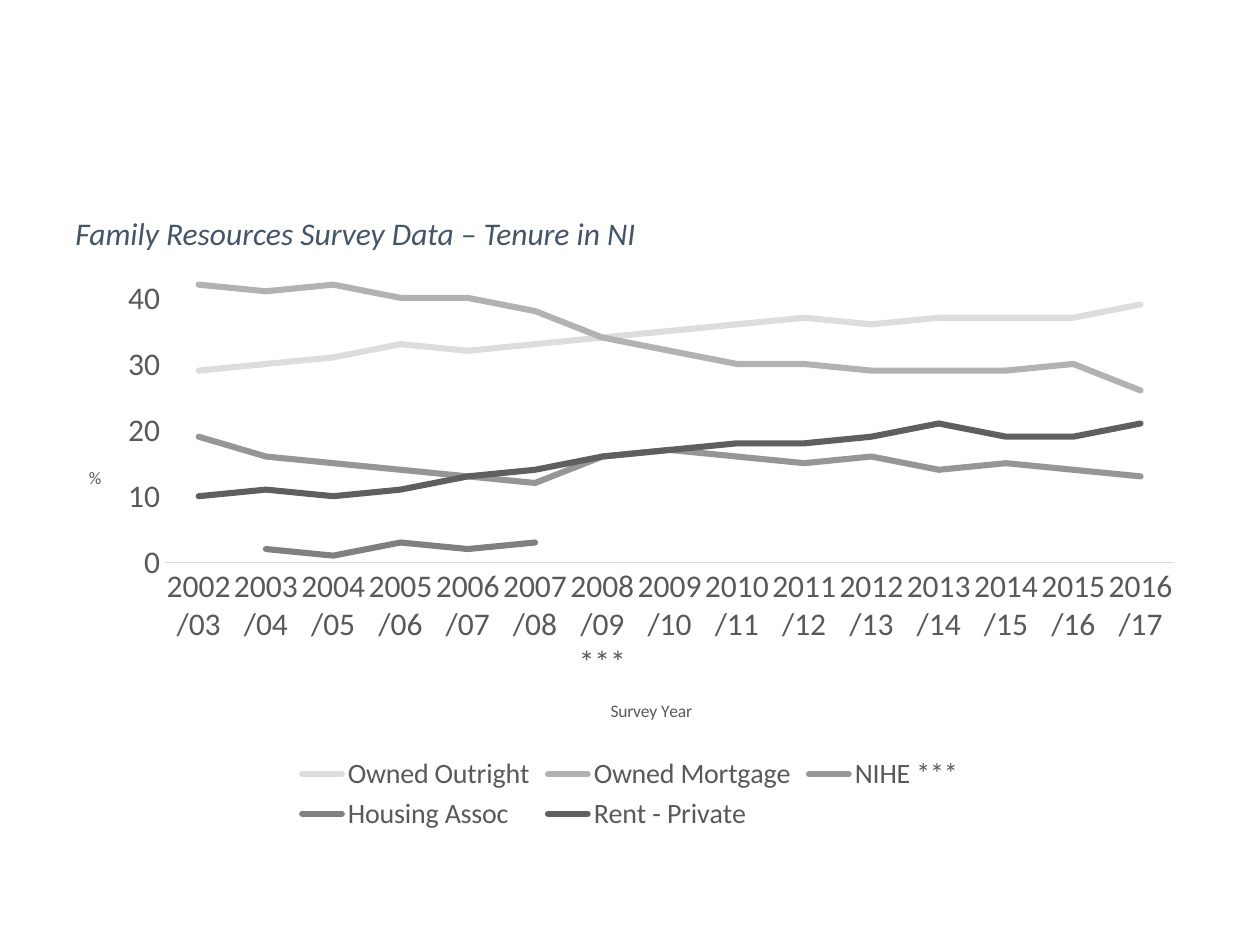
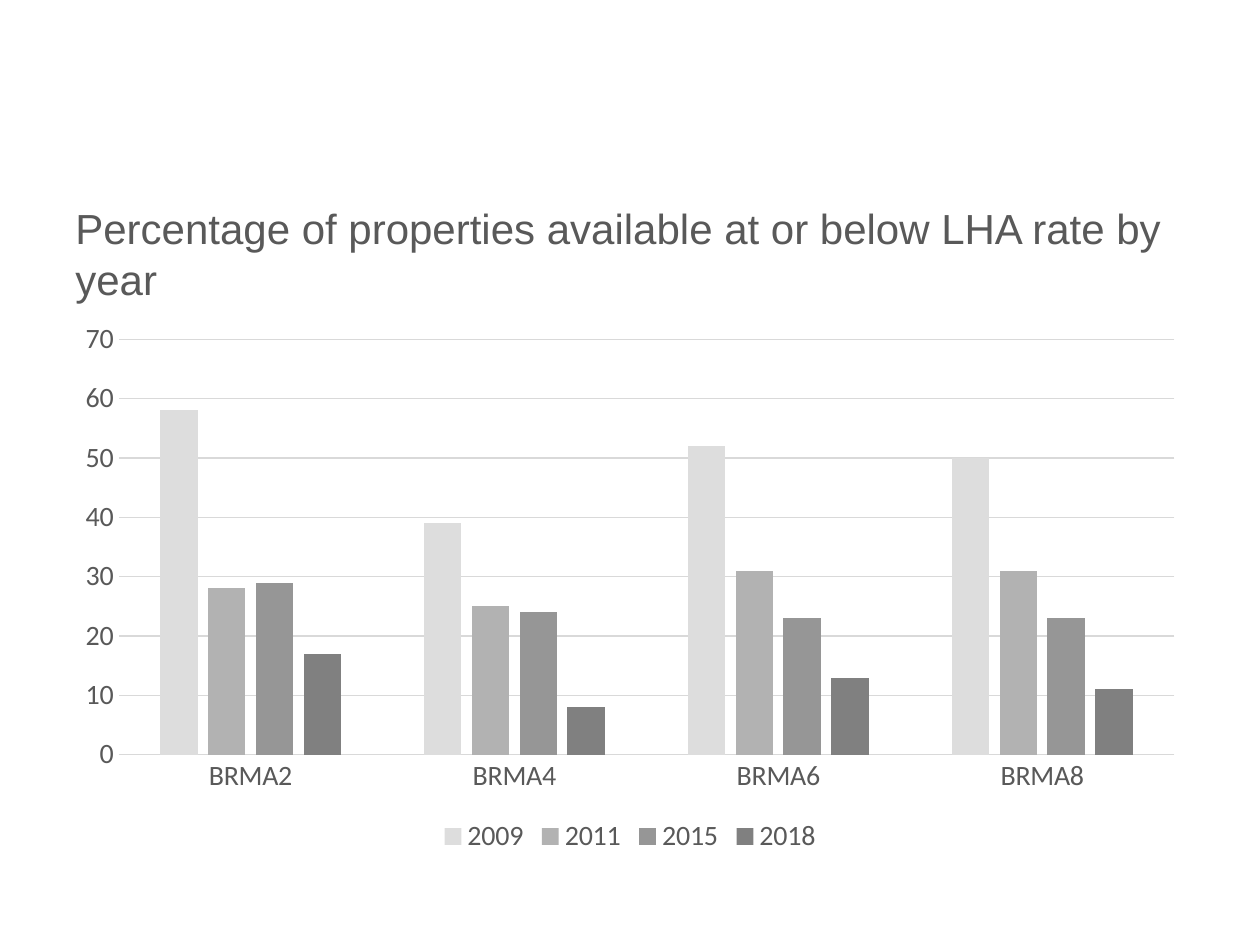
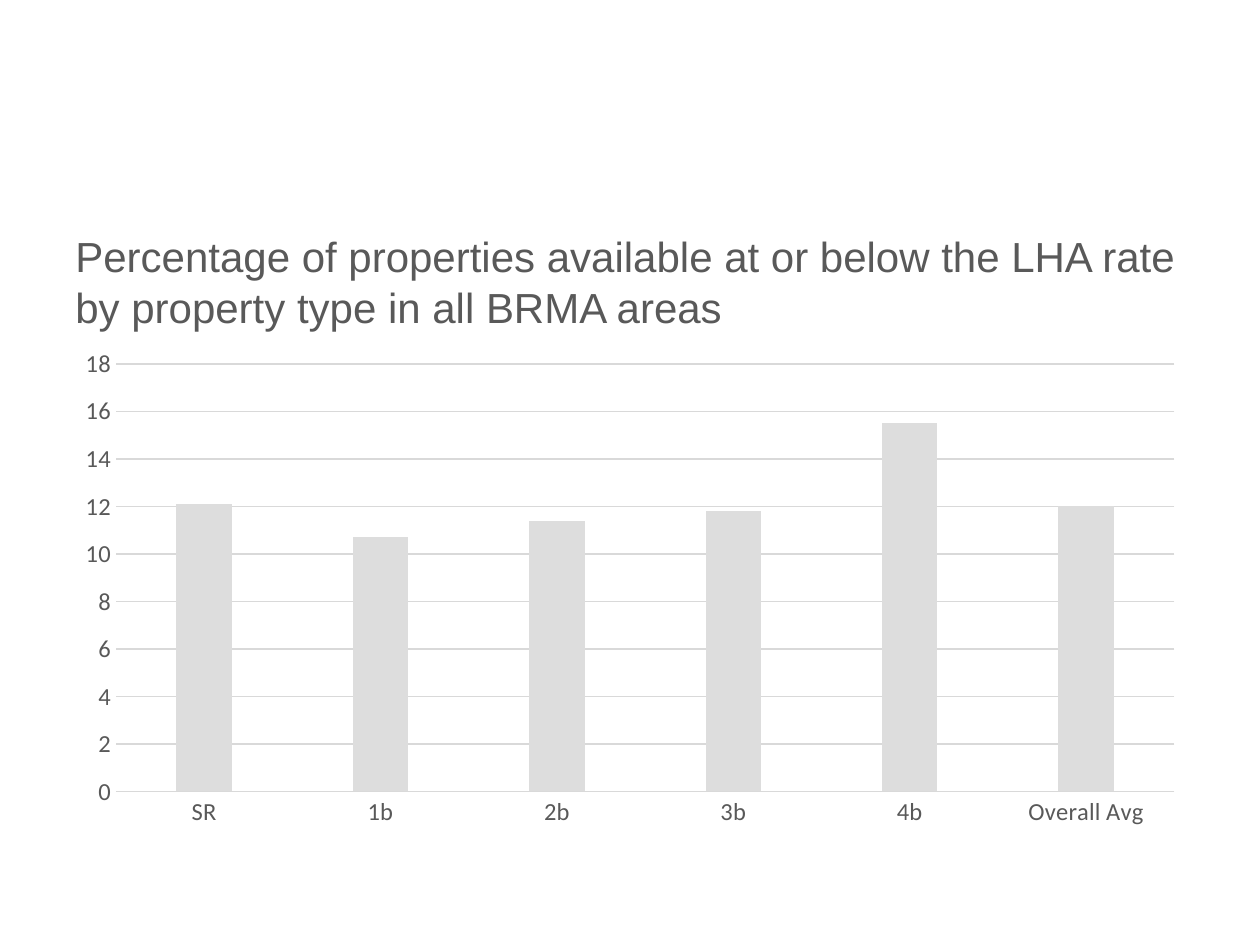
from lxml import etree
from pptx import Presentation
from pptx import util as u
from pptx.chart.data import CategoryChartData
from pptx.dml.color import RGBColor
from pptx.enum import chart as ch, text
from pptx.oxml.ns import qn

TEXT_GREY = "595959"
HEADING_BLUE = "44546A"
RULE_GREY = "D9D9D9"
SERIES_GREYS = ["DDDDDD", "B2B2B2", "969696", "808080", "5F5F5F"]
LEFT, WIDTH = 0.5, 9

TENURE_YEARS = [f"{year}/{(year + 1) % 100:02d}" + (" ***" if year == 2008 else "")
                for year in range(2002, 2017)]
TENURE = {
    "Owned Outright": [29, 30, 31, 33, 32, 33, 34, 35, 36, 37, 36, 37, 37, 37, 39],
    "Owned Mortgage": [42, 41, 42, 40, 40, 38, 34, 32, 30, 30, 29, 29, 29, 30, 26],
    "NIHE ***": [19, 16, 15, 14, 13, 12, 16, 17, 16, 15, 16, 14, 15, 14, 13],
    "Housing Assoc": [None, 2, 1, 3, 2, 3] + [None] * 9,
    "Rent - Private": [10, 11, 10, 11, 13, 14, 16, 17, 18, 18, 19, 21, 19, 19, 21],
}
BRMAS = ["BRMA2", "BRMA4", "BRMA6", "BRMA8"]
LHA_BY_YEAR = {
    "2009": [58, 39, 52, 50],
    "2011": [28, 25, 31, 31],
    "2015": [29, 24, 23, 23],
    "2018": [17, 8, 13, 11],
}
PROPERTY_TYPES = ["SR", "1b", "2b", "3b", "4b", "Overall Avg"]
LHA_BY_TYPE = {"Series 1": [12.1, 10.7, 11.4, 11.8, 15.5, 12]}


def rgb(code):
    """Turn a hex string into a colour."""
    return RGBColor.from_string(code)


def style_font(font, size, color=TEXT_GREY, name="Calibri"):
    """Set the face, size and colour of a font."""
    font.name, font.size, font.bold = name, u.Pt(size), False
    font.color.rgb = rgb(color)


def add_heading(slide, wording, top, width, height, size=24, color=TEXT_GREY,
                name="Arial", italic=False, wrap=True, anchor=text.MSO_ANCHOR.MIDDLE):
    """Add the heading above a chart."""
    heading = slide.shapes.add_textbox(
        u.Inches(LEFT), u.Inches(top), u.Inches(width), u.Inches(height))
    frame = heading.text_frame
    frame.word_wrap, frame.vertical_anchor = wrap, anchor
    run = frame.paragraphs[0].add_run()
    run.text = wording
    style_font(run.font, size, color, name)
    run.font.italic = italic


def place(part, index, **fractions):
    """Fix a chart part at fractions of the chart area."""
    for previous in part.findall(qn("c:layout")):
        part.remove(previous)
    layout = etree.Element(qn("c:layout"))
    part.insert(index, layout)
    manual = etree.SubElement(layout, qn("c:manualLayout"))
    settings = {"xMode": "edge", "yMode": "edge", **fractions}
    if "w" in fractions:
        settings = {"layoutTarget": "inner", **settings}
    for tag, value in settings.items():
        etree.SubElement(manual, qn(f"c:{tag}")).set("val", str(value))


def add_axis_title(axis, wording, x, y):
    """Give an axis a small horizontal title."""
    frame = axis.axis_title.text_frame
    run = frame.paragraphs[0].add_run()
    run.text = wording
    style_font(run.font, 10)
    frame._txBody.bodyPr.set("rot", "0")
    place(axis.axis_title._element, 1, x=x, y=y)


def style_axes(chart, size, top_value, step, gridlines):
    """Style both axes and set the value scale."""
    for axis in (chart.category_axis, chart.value_axis):
        axis.major_tick_mark = axis.minor_tick_mark = ch.XL_TICK_MARK.NONE
        style_font(axis.tick_labels.font, size)
    rule = chart.category_axis.format.line
    rule.color.rgb, rule.width = rgb(RULE_GREY), u.Pt(0.75)
    values = chart.value_axis
    values.format.line.fill.background()
    values.minimum_scale, values.maximum_scale, values.major_unit = 0, top_value, step
    values.tick_labels.number_format = "0"
    values.tick_labels.number_format_is_linked = False
    values.has_major_gridlines = gridlines
    if gridlines:
        grid = values.major_gridlines.format.line
        grid.color.rgb, grid.width = rgb(RULE_GREY), u.Pt(0.75)


def add_survey_chart(slide, kind, top, height, categories, table, size, top_value, step,
                     gridlines=True, legend=True):
    """Add a chart in the shared style and return it."""
    data = CategoryChartData()
    data.categories = categories
    for name, values in table.items():
        data.add_series(name, values)
    chart = slide.shapes.add_chart(
        kind, u.Inches(LEFT), u.Inches(top), u.Inches(WIDTH), u.Inches(height), data).chart
    chart.has_title = False
    style_font(chart.font, 10, "000000")
    style_axes(chart, size, top_value, step, gridlines)
    chart.has_legend = legend
    if legend:
        chart.legend.position = ch.XL_LEGEND_POSITION.BOTTOM
        chart.legend.include_in_layout = False
        style_font(chart.legend.font, 16)
    chart.plots[0].vary_by_categories = False
    return chart


def add_lines(slide, *args, **options):
    """Add a line chart with thick grey lines."""
    chart = add_survey_chart(slide, ch.XL_CHART_TYPE.LINE, *args, **options)
    for series, grey in zip(chart.plots[0].series, SERIES_GREYS):
        series.smooth = False
        series.marker.style = ch.XL_MARKER_STYLE.NONE
        line = series.format.line
        line.color.rgb, line.width = rgb(grey), u.Pt(3.5)
        line._get_or_add_ln().set("cap", "rnd")
    return chart


def add_columns(slide, *args, **options):
    """Add a clustered column chart in greys."""
    chart = add_survey_chart(slide, ch.XL_CHART_TYPE.COLUMN_CLUSTERED, *args, **options)
    plot = chart.plots[0]
    plot.gap_width, plot.overlap = 219, -27
    for series, grey in zip(plot.series, SERIES_GREYS):
        series.format.fill.solid()
        series.format.fill.fore_color.rgb = rgb(grey)
    return chart


def main():
    """Build the three chart slides."""
    deck = Presentation()
    deck.slide_width, deck.slide_height = u.Inches(10), u.Inches(7.5)
    tenure, by_year, by_type = [deck.slides.add_slide(deck.slide_layouts[6]) for _ in range(3)]

    add_heading(tenure, "Family Resources Survey Data – Tenure in NI", 1.65, 4.87, 0.71,
                18, HEADING_BLUE, "Calibri", italic=True, wrap=False,
                anchor=text.MSO_ANCHOR.TOP)
    chart = add_lines(tenure, 2.01, 4.63, TENURE_YEARS, TENURE, 18, 45, 10, gridlines=False)
    add_axis_title(chart.category_axis, "Survey Year", 0.48, 0.76)
    add_axis_title(chart.value_axis, "%", 0.02, 0.36)
    place(chart._chartSpace.chart.plotArea, 0, x=0.09, y=0.02, w=0.89, h=0.51)

    add_heading(by_year, "Percentage of properties available at or below LHA rate by year",
                1.55, WIDTH, 0.92)
    add_columns(by_year, 2.47, 4.35, BRMAS, LHA_BY_YEAR, 16, 70, 10)

    add_heading(by_type, "Percentage of properties available at or below the LHA rate "
                "by property type in all BRMA areas", 1.77, WIDTH, 0.92)
    add_columns(by_type, 2.69, 3.95, PROPERTY_TYPES, LHA_BY_TYPE, 14, 18, 2, legend=False)

    deck.save("out.pptx")


if __name__ == "__main__":
    main()
